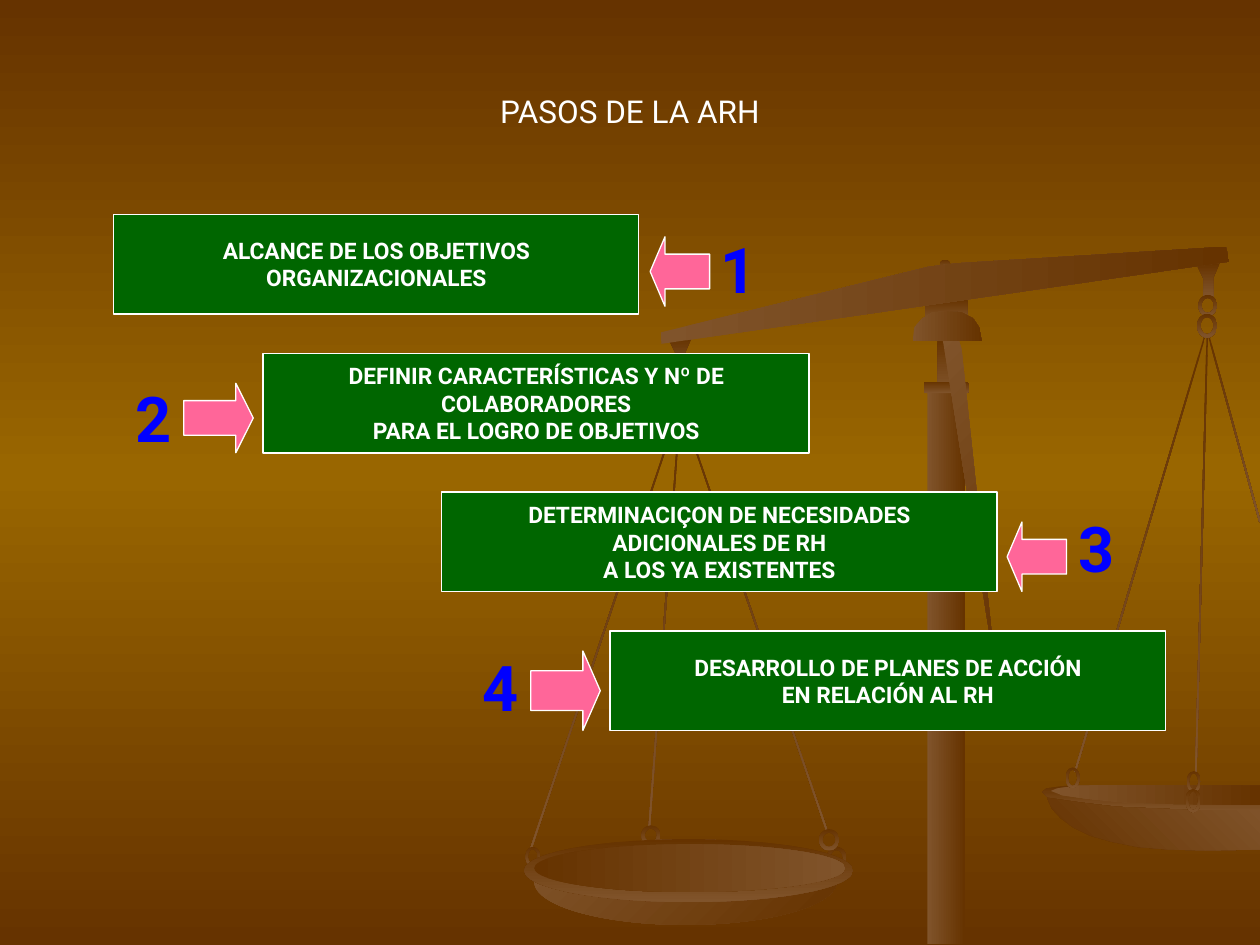
from copy import deepcopy

from pptx import Presentation
from pptx.dml.color import RGBColor
from pptx.enum.shapes import MSO_SHAPE as Preset
from pptx.enum.text import MSO_ANCHOR as Anchor, MSO_AUTO_SIZE as AutoSize, PP_ALIGN as Align
from pptx.oxml.ns import qn
from pptx.util import Pt

BROWN, TAN, GOLD = "663300", "80542B", "996600"
GREEN, PINK, WHITE, BLUE = "006600", "FF6699", "FFFFFF", "0000FF"

TITLE_FONT = {"name": "Roboto", "size": Pt(18), "bold": False}
STEP_FONT = {"name": "Roboto", "size": Pt(13), "bold": True}
NUMBER_FONT = {"name": "Roboto", "size": Pt(36), "bold": True}

STEP_TOP, STEP_PITCH, STEP_HEIGHT = 122.4, 79.4, 57
STEPS = [
    (65, 300, ["ALCANCE DE LOS OBJETIVOS", "ORGANIZACIONALES"],
     Preset.LEFT_ARROW, (371.5, 135.3, 34, 39.7), (399.6, 128)),
    (150.3, 312, ["DEFINIR CARACTERÍSTICAS Y Nº DE", "COLABORADORES",
                  "PARA EL LOGRO DE OBJETIVOS"],
     Preset.RIGHT_ARROW, (105, 219, 39.7, 39.7), (64.8, 213.2)),
    (252.2, 317.5, ["DETERMINACIÇON DE NECESIDADES", "ADICIONALES DE RH",
                    "A LOS YA EXISTENTES"],
     Preset.LEFT_ARROW, (575.5, 298.3, 34, 39.7), (604, 287.3)),
    (348.5, 317.5, ["DESARROLLO DE PLANES DE ACCIÓN", "EN RELACIÓN AL RH"],
     Preset.RIGHT_ARROW, (303.3, 372, 39.7, 45.4), (263.5, 366.5)),
]

STRINGS = [
    (650.9, 187.2, 259.2, 16.6), (686.2, 191.5, 249.8, 1.5), (704.9, 190, 110.2, -15.4),
    (430.5, 226.8, 254.2, -19), (345, 227.5, 265, 18.6), (379.4, 234, 238.3, 4.2),
]
BACK_RINGS = [
    (609, 438.5, 8, 12), (684.7, 168.5, 10.8, 12.2), (684, 179.3, 11.5, 13.7),
    (678.2, 440.6, 8, 12.2), (366.5, 471.6, 10.8, 11.5), (472.3, 483.8, 11.5, 13.7),
    (300.2, 483.8, 8.6, 11.5),
]
FRONT_RINGS = [(468, 473.8, 11.5, 12.2), (677.5, 450.7, 8.6, 13.7)]

RIGHT_RIM = [
    (689.8, 449.3), (655, 449), (630, 448.6), (609, 449), (598, 450.5), (595.5, 452.5),
    (599, 456), (606, 458), (621.5, 460), (643.7, 462.5), (673, 464), (720, 464.4),
    (720, 450.5),
]
RIGHT_BOWL = [
    (598.3, 455.8), (601, 462), (606, 467.5), (613.5, 473), (623, 477.5), (635, 481),
    (650, 484), (668, 485.5), (689, 486), (720, 485.5), (720, 463), (686, 463),
    (661, 462), (638, 461), (617, 458.5),
]
RIGHT_INSIDE = [
    (688, 448.6), (638, 448.6), (616, 449), (604, 450.5), (600.5, 452), (607, 454.5),
    (621.5, 456.5), (643, 458.5), (672, 459.5), (720, 460), (720, 449),
]
HOOK = [(13, 0), (0, 1.4), (3.6, 8.6), (3.6, 19), (9.4, 19), (9.4, 8)]
HOOK_PLACES = [(382.3, 193), (684, 150.5)]
BEAM = [
    (700.5, 141), (702.5, 149.5), (378, 196.5), (377.5, 190), (530.5, 152.5), (546.5, 150.5),
]
RIBBON = [(569.5, 388), (540, 201.5), (538.5, 193), (547, 191), (549.5, 199.5)]
DOME = [
    (541.5, 178), (549.5, 178.5), (556, 182), (559.5, 187), (561, 195), (521.5, 195),
    (522.5, 187), (527, 182), (533, 178.5),
]


def color(hex_text):
    return RGBColor.from_string(hex_text)


def apply_gradient(fill, colors, angle):
    fill.gradient()
    fill.gradient_angle = (360 - angle) % 360
    for stop, hex_text in zip(fill.gradient_stops, colors):
        stop.color.rgb = color(hex_text)


def paint_background(slide):
    fill = slide.background.fill
    apply_gradient(fill, [BROWN, BROWN], 90)
    stops = slide.element.find(".//" + qn("a:gsLst"))
    stops.insert(1, deepcopy(stops[0]))
    middle = fill.gradient_stops[1]
    middle.position = 0.5
    middle.color.rgb = color(GOLD)


def finish_metal(shape, colors, angle):
    shape.shadow.inherit = False
    apply_gradient(shape.fill, colors, angle)
    shape.line.fill.background()


def add_metal(slide, preset, box, colors=(BROWN, TAN), angle=90):
    shape = slide.shapes.add_shape(preset, *map(Pt, box))
    finish_metal(shape, colors, angle)
    return shape


def add_outline(slide, points, colors=(BROWN, TAN), angle=90):
    corners = [(Pt(x), Pt(y)) for x, y in points]
    builder = slide.shapes.build_freeform(*corners[0])
    builder.add_line_segments(corners[1:], close=True)
    finish_metal(builder.convert_to_shape(), colors, angle)


def add_rings(slide, boxes):
    for box in boxes:
        add_metal(slide, Preset.DONUT, box).adjustments[0] = 0.17


def draw_scale(slide):
    light_first = (TAN, BROWN)
    add_metal(slide, Preset.RECTANGLE, (528.5, 170.6, 24.5, 13))
    add_metal(slide, Preset.OVAL, (537.1, 148.3, 5.8, 5.8))
    for left, top, height, rotation in STRINGS:
        add_metal(slide, Preset.RECTANGLE, (left, top, 0.9, height)).rotation = rotation
    add_outline(slide, RIGHT_RIM)
    add_outline(slide, RIGHT_BOWL, angle=315)
    add_outline(slide, RIGHT_INSIDE, light_first, 0)
    for left, top in HOOK_PLACES:
        add_outline(slide, [(left + x, top + y) for x, y in HOOK])
    add_rings(slide, BACK_RINGS)
    add_outline(slide, BEAM, light_first, 0)
    add_metal(slide, Preset.OVAL, (305.3, 479.5, 172.8, 49), light_first, 45)
    add_metal(slide, Preset.OVAL, (299.5, 479.5, 188, 36))
    add_metal(slide, Preset.OVAL, (305.3, 482.4, 177.8, 27.4), angle=0)
    add_rings(slide, FRONT_RINGS)
    add_metal(slide, Preset.RECTANGLE, (529.9, 221.8, 21.6, 317.5), light_first, 0)
    add_metal(slide, Preset.RECTANGLE, (535.7, 193, 9.4, 30.2))
    add_metal(slide, Preset.ROUNDED_RECTANGLE, (527.8, 218.2, 25.9, 6.5))
    add_outline(slide, RIBBON, light_first, 45)
    add_outline(slide, DOME, light_first, 0)


def write_lines(shape, lines, font_values, hex_text, wrap=True):
    frame = shape.text_frame
    frame.text = "\n".join(lines)
    frame_values = {"word_wrap": wrap, "auto_size": AutoSize.NONE,
                    "vertical_anchor": Anchor.MIDDLE}
    for name, value in frame_values.items():
        setattr(frame, name, value)
    for paragraph in frame.paragraphs:
        paragraph.alignment = Align.CENTER
        for name, value in font_values.items():
            setattr(paragraph.runs[0].font, name, value)
        paragraph.runs[0].font.color.rgb = color(hex_text)


def add_title(slide):
    title = slide.shapes.title
    place = {"left": 76.3, "top": 49, "width": 567.4, "height": 28.8}
    for name, value in place.items():
        setattr(title, name, Pt(value))
    write_lines(title, ["PASOS DE LA ARH"], TITLE_FONT, WHITE)


def add_block(slide, preset, box, hex_text):
    shape = slide.shapes.add_shape(preset, *map(Pt, box))
    shape.shadow.inherit = False
    shape.fill.solid()
    shape.fill.fore_color.rgb = color(hex_text)
    shape.line.color.rgb = color(WHITE)
    shape.line.width = Pt(0.75)
    return shape


def add_step(slide, index, left, width, lines, arrow, arrow_box, number_place):
    box = (left, STEP_TOP + index * STEP_PITCH, width, STEP_HEIGHT)
    write_lines(add_block(slide, Preset.RECTANGLE, box, GREEN), lines, STEP_FONT, WHITE, False)
    number = slide.shapes.add_textbox(*map(Pt, (*number_place, 45.4, 51)))
    write_lines(number, [str(index + 1)], NUMBER_FONT, BLUE)
    add_block(slide, arrow, arrow_box, PINK).adjustments[1] = 0.25


def main():
    presentation = Presentation()
    presentation.slide_width, presentation.slide_height = Pt(720), Pt(540)
    slide = presentation.slides.add_slide(presentation.slide_layouts[5])
    paint_background(slide)
    draw_scale(slide)
    add_title(slide)
    for index, step in enumerate(STEPS):
        add_step(slide, index, *step)
    presentation.save("out.pptx")


if __name__ == "__main__":
    main()
